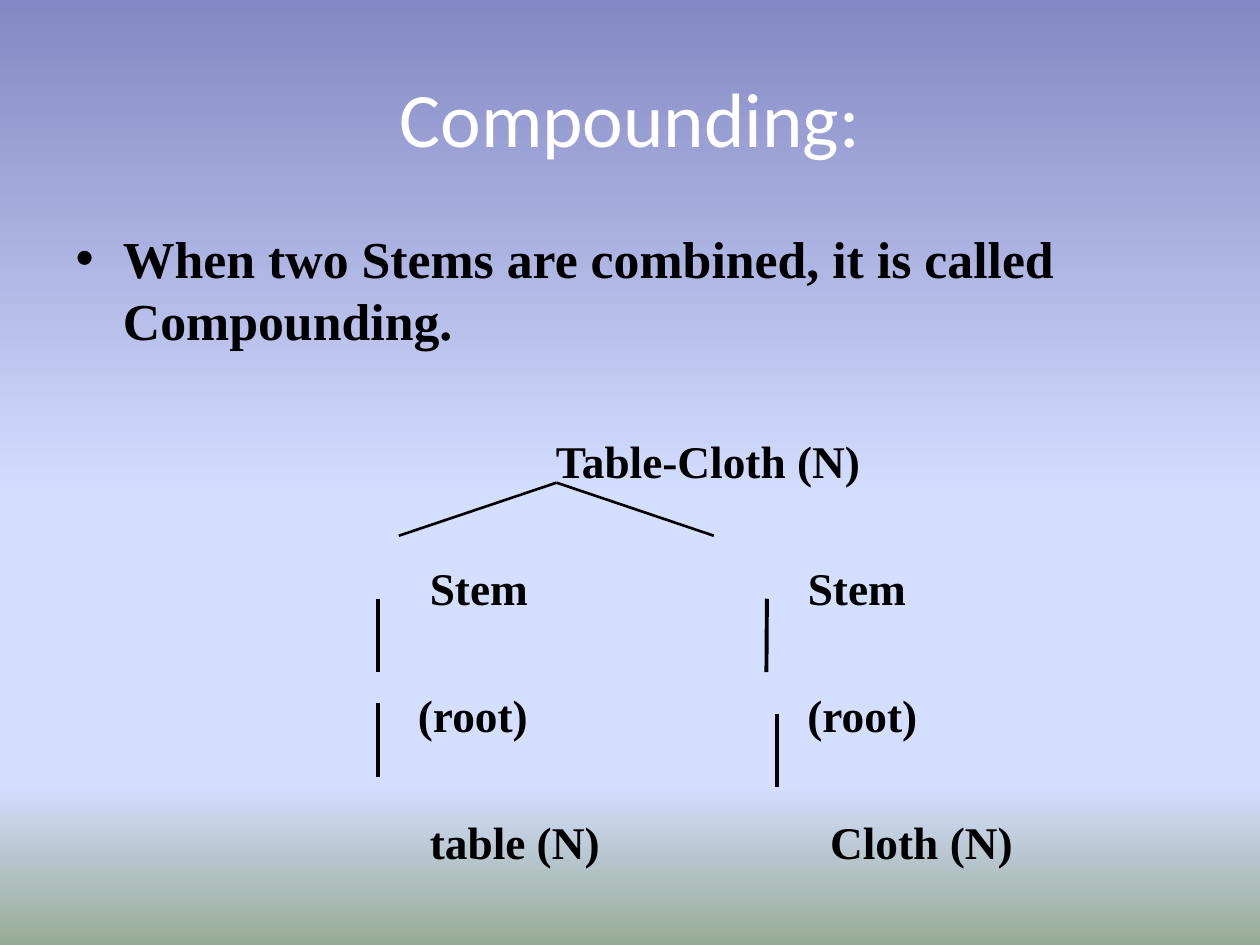
from typing import NamedTuple

from lxml.etree import SubElement as Sub
from pptx import Presentation
from pptx.dml.color import RGBColor
from pptx.enum.shapes import MSO_CONNECTOR as Link
from pptx.enum.text import MSO_ANCHOR as Anchor, MSO_AUTO_SIZE as Fit, PP_ALIGN as Align
from pptx.oxml.ns import qn
from pptx.util import Cm, Pt


class Row(NamedTuple):
    text: str
    left: float
    step: float = 7.62
    gap: float = 41.6


class Line(NamedTuple):
    x1: float
    y1: float
    x2: float
    y2: float
    width: float = 2.25


BLACK, WHITE = "000000", "FFFFFF"
SKY = ((0, "8488C4"), (53, "D4DEFF"), (83, "D4DEFF"), (100, "96AB94"))
ROWS = (
    Row("Table-Cloth (N)", 9.68, gap=47),
    Row("Stem\tStem", 7.14),
    Row("(root)\t(root)", 6.9, 7.85),
    Row("table (N)\tCloth (N)", 7.14, 8.09),
)
TOP = (11.22, 9.73)
DROP = 1.48
LINES = (
    Line(7.62, 12.07, 7.62, 12.07 + DROP),
    Line(15.46, 12.07, 15.45, 12.07 + DROP),
    Line(7.62, 14.18, 7.62, 14.18 + DROP),
    Line(15.67, 14.39, 15.67, 14.39 + DROP),
    Line(*TOP, 8.04, 10.8, 1.5),
    Line(*TOP, 14.39, 10.8, 1.5),
)


def tint(color, code: str) -> None:
    """Set a colour from a hex string."""
    color.rgb = RGBColor.from_string(code)


def place(shape, left: float, top: float, width: float, height: float) -> None:
    """Move and size a shape in centimetres."""
    shape.left, shape.top = Cm(left), Cm(top)
    shape.width, shape.height = Cm(width), Cm(height)


def style(para, size: float, face: str, code: str, bold: bool) -> None:
    """Format every run of a paragraph."""
    for run in para.runs:
        font = run.font
        font.size, font.name, font.bold = Pt(size), face, bold
        tint(font.color, code)


def space(para, before: float, pitch: float) -> None:
    """Set the gap above a paragraph and its line pitch."""
    para.space_before, para.line_spacing = Pt(before), Pt(pitch)


def paint(slide) -> None:
    """Fill the background with the vertical gradient."""
    fill = slide.background.fill
    fill.gradient()
    fill.gradient_angle = 270
    stops = next(slide.element.iter(qn("a:gsLst")))
    for stop in list(stops):
        stops.remove(stop)
    for spot, code in SKY:
        stop = Sub(stops, qn("a:gs"), pos=str(spot * 1000))
        Sub(stop, qn("a:srgbClr"), val=code)


def add_row(frame, row: Row) -> None:
    """Add one level of the tree, indented, with its words one tab apart."""
    para = frame.add_paragraph()
    para.text = row.text
    para.level = 1
    style(para, 25.9, "Times New Roman", BLACK, True)
    space(para, row.gap, 31)
    props = para._p.get_or_add_pPr()
    props.set("marL", str(int(Cm(row.left))))
    props.set("indent", "0")
    props.set("defTabSz", str(int(Cm(row.step))))
    Sub(props, qn("a:buNone"))


def add_line(slide, line: Line) -> None:
    """Draw one branch of the tree."""
    ends = (Cm(n) for n in line[:4])
    shape = slide.shapes.add_connector(Link.STRAIGHT, *ends)
    shape.line.width = Pt(line.width)
    tint(shape.line.color, BLACK)
    Sub(shape.element.spPr, qn("a:effectLst"))


def main() -> None:
    """Build the slide and save it."""
    deck = Presentation()
    deck.slide_width, deck.slide_height = Cm(25.4), Cm(19.05)
    slide = deck.slides.add_slide(deck.slide_layouts[1])
    paint(slide)

    title, body = slide.placeholders
    place(title, 1.27, 0.76, 22.86, 3.18)
    frame = title.text_frame
    frame.text = "Compounding:"
    frame.vertical_anchor = Anchor.MIDDLE
    frame.paragraphs[0].alignment = Align.CENTER
    style(frame.paragraphs[0], 44, "Calibri", WHITE, False)

    place(body, 1.27, 4.45, 22.86, 12.57)
    frame = body.text_frame
    frame.text = "When two Stems are combined, it is called Compounding."
    frame.auto_size = Fit.NONE
    style(frame.paragraphs[0], 29.6, "Times New Roman", BLACK, True)
    space(frame.paragraphs[0], 3, 35.4)
    for row in ROWS:
        add_row(frame, row)
    for line in LINES:
        add_line(slide, line)
    deck.save("out.pptx")


if __name__ == "__main__":
    main()
